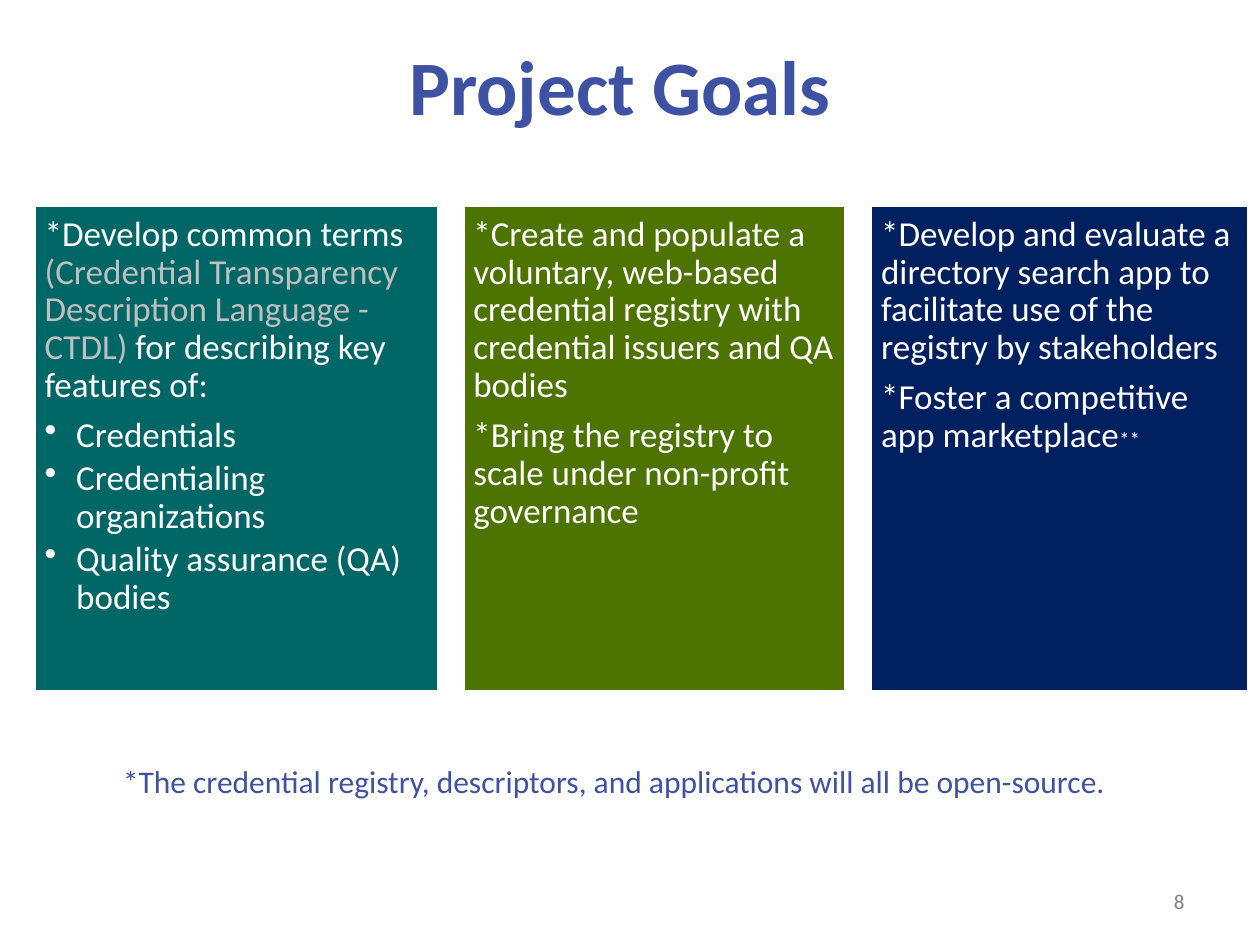
from dataclasses import dataclass

from lxml import etree
from pptx import Presentation
from pptx.dml.color import RGBColor
from pptx.enum import shapes, text
from pptx.oxml.ns import qn
from pptx.util import Pt


@dataclass(frozen=True)
class Theme:
    font: str = "Calibri"
    accent: str = "3E51A3"
    white: str = "FFFFFF"
    muted: str = "BFBFBF"
    grey: str = "808080"
    teal: str = "006666"
    green: str = "4D7300"
    navy: str = "002060"
    title: int = 44
    body: int = 20
    footnote: int = 18
    small: int = 12


class GoalsSlide:
    def __init__(self, deck, theme):
        self.theme = theme
        self.slide = deck.slides.add_slide(deck.slide_layouts[6])

    def run(self, paragraph, words, size, color, bold=False):
        run = paragraph.add_run()
        run.text = words
        run.font.name = self.theme.font
        run.font.size = Pt(size)
        run.font.bold = bold
        run.font.color.rgb = RGBColor.from_string(color)

    def label(self, box, words, size, color, align, anchor=text.MSO_ANCHOR.TOP, bold=False):
        frame = self.slide.shapes.add_textbox(*map(Pt, box)).text_frame
        frame.word_wrap = True
        frame.vertical_anchor = anchor
        paragraph = frame.paragraphs[0]
        paragraph.alignment = align
        self.run(paragraph, words, size, color, bold)
        return frame

    def bullet(self, paragraph):
        props = paragraph._p.get_or_add_pPr()
        props.set("marL", str(Pt(18)))
        props.set("indent", str(Pt(-18)))
        etree.SubElement(props, qn("a:buChar")).set("char", "•")

    def panel(self, box, color, goals, bullets=()):
        """Draw a filled panel; each goal is a list of (words, size, color) runs."""
        panel = self.slide.shapes.add_shape(shapes.MSO_SHAPE.RECTANGLE, *map(Pt, box))
        panel.shadow.inherit = False
        panel.fill.solid()
        panel.fill.fore_color.rgb = RGBColor.from_string(color)
        panel.line.color.rgb = RGBColor.from_string(self.theme.white)
        panel.line.width = Pt(2)

        frame = panel.text_frame
        frame.word_wrap = True
        frame.vertical_anchor = text.MSO_ANCHOR.TOP
        frame.margin_left = frame.margin_right = Pt(6)
        frame.margin_top = frame.margin_bottom = Pt(6)
        items = [(goal, False) for goal in goals]
        items += [([(words, self.theme.body, self.theme.white)], True) for words in bullets]
        for index, (runs, bulleted) in enumerate(items):
            paragraph = frame.add_paragraph() if index else frame.paragraphs[0]
            paragraph.alignment = text.PP_ALIGN.LEFT
            paragraph.line_spacing = 0.9
            paragraph.space_after = Pt(3 if bulleted else 7)
            if bulleted:
                self.bullet(paragraph)
            for words, size, run_color in runs:
                self.run(paragraph, words, size, run_color)


def main():
    deck = Presentation()
    deck.slide_width, deck.slide_height = Pt(720), Pt(540)
    theme = Theme()
    goals = GoalsSlide(deck, theme)
    center, right = text.PP_ALIGN.CENTER, text.PP_ALIGN.RIGHT

    heading = goals.label((-3.6, 15.84, 725.76, 104.4), "Project Goals",
                          theme.title, theme.accent, center, bold=True)
    heading.margin_top = Pt(6)
    heading.margin_right = Pt(17)

    def plain(words):
        return words, theme.body, theme.white

    terms = [[plain("*Develop common terms "),
              ("(Credential Transparency Description Language - CTDL) ", theme.body, theme.muted),
              plain("for describing key features of:")]]
    registry = [[plain("*Create and populate a voluntary, web-based credential registry "
                       "with credential issuers and QA bodies")],
                [plain("*Bring the registry to scale under non-profit governance")]]
    apps = [[plain("*Develop and evaluate a directory search app to facilitate use of "
                   "the registry by stakeholders")],
            [plain("*Foster a competitive app marketplace"), ("**", theme.small, theme.white)]]
    described = ["Credentials", "Credentialing organizations", "Quality assurance (QA) bodies"]

    left, gap = 19.5, 14
    for width, color, content, bullets in (
        (231, theme.teal, terms, described),
        (219, theme.green, registry, ()),
        (216, theme.navy, apps, ()),
    ):
        goals.panel((left, 117.5, width, 278), color, content, bullets)
        left += width + gap

    goals.label((2.9, 432, 696.2, 28.8),
                "*The credential registry, descriptors, and applications will all be open-source.",
                theme.footnote, theme.accent, center)
    goals.label((516, 500.5, 168, 28.8), "8", theme.small, theme.grey, right,
                text.MSO_ANCHOR.MIDDLE)
    deck.save("out.pptx")


if __name__ == "__main__":
    main()
